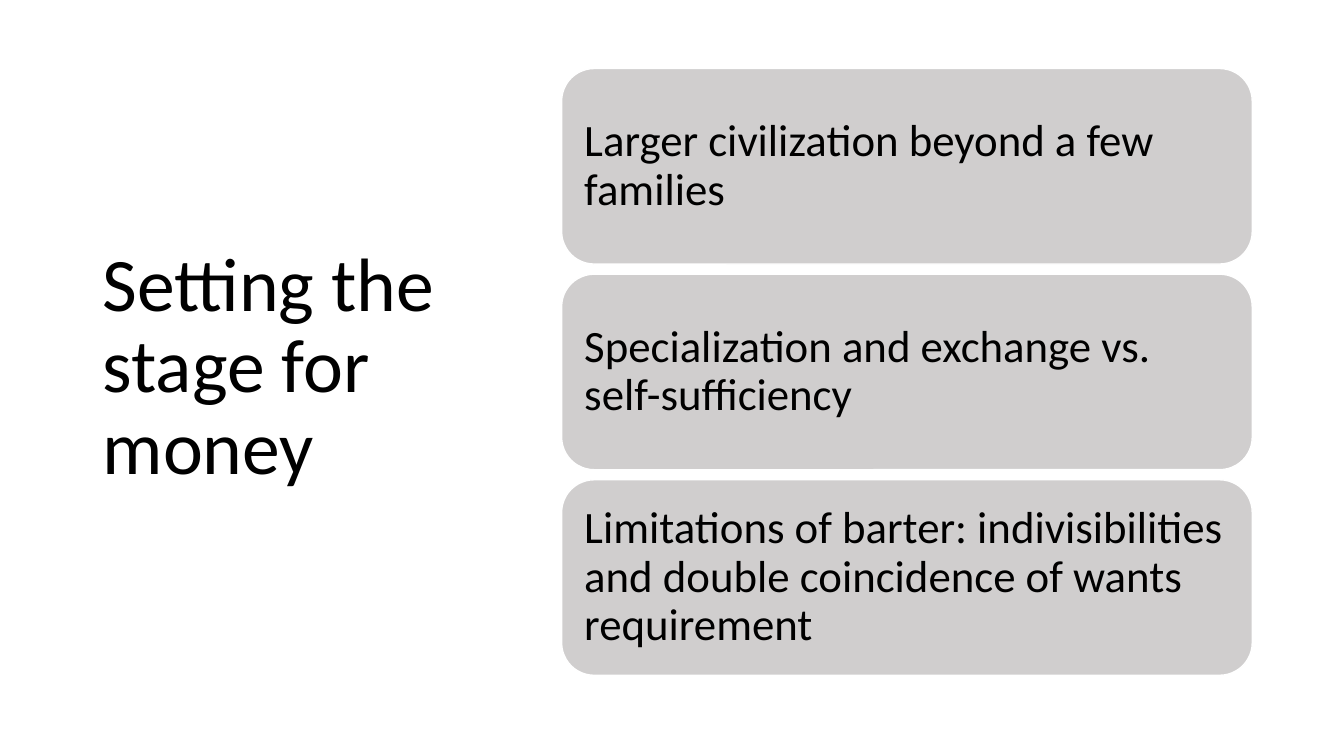
from pptx import Presentation
from pptx.dml.color import RGBColor
from pptx.enum.shapes import MSO_SHAPE as Shape
from pptx.enum.text import MSO_ANCHOR as Anchor, PP_ALIGN as Align
from pptx.util import Inches, Pt


def color(value):
    return RGBColor.from_string(value)


class StageSlide:
    font = "Calibri"
    ink = "000000"
    card_fill = "D0CECE"
    card_line = "FFFFFF"

    def __init__(self, deck):
        self.page = deck.slides.add_slide(deck.slide_layouts[6])

    def set_text(self, box, text, size, side, edge):
        frame = box.text_frame
        frame.text = text
        frame.word_wrap = True
        frame.vertical_anchor = Anchor.MIDDLE
        frame.margin_left = frame.margin_right = Inches(side)
        frame.margin_top = frame.margin_bottom = Inches(edge)
        para = frame.paragraphs[0]
        para.alignment = Align.LEFT
        para.line_spacing = 0.9
        span = para.runs[0]
        span.font.name = self.font
        span.font.size = Pt(size)
        span.font.color.rgb = color(self.ink)

    def title(self, text, left, top, width, height):
        box = self.page.shapes.add_textbox(
            Inches(left), Inches(top), Inches(width), Inches(height))
        self.set_text(box, text, 54, 0.1, 0.05)

    def card(self, text, left, top, width, height):
        box = self.page.shapes.add_shape(
            Shape.ROUNDED_RECTANGLE,
            Inches(left), Inches(top), Inches(width), Inches(height))
        box.shadow.inherit = False
        box.fill.solid()
        box.fill.fore_color.rgb = color(self.card_fill)
        box.line.color.rgb = color(self.card_line)
        box.line.width = Pt(1)
        self.set_text(box, text, 32, 0.13, 0.13)


CONDITIONS = [
    "Larger civilization beyond a few families",
    "Specialization and exchange vs. self-sufficiency",
    "Limitations of barter: indivisibilities and double coincidence of wants requirement",
]
CARD_TOP = 0.68
CARD_HEIGHT = 1.94
CARD_GAP = 0.1


def main():
    deck = Presentation()
    deck.slide_width = Inches(13.33)
    deck.slide_height = Inches(7.5)
    slide = StageSlide(deck)
    slide.title("Setting the stage for money", 0.92, 0.61, 3.69, 6.09)
    for index, condition in enumerate(CONDITIONS):
        top = CARD_TOP + index * (CARD_HEIGHT + CARD_GAP)
        slide.card(condition, 5.57, top, 6.85, CARD_HEIGHT)
    deck.save("out.pptx")


if __name__ == "__main__":
    main()
